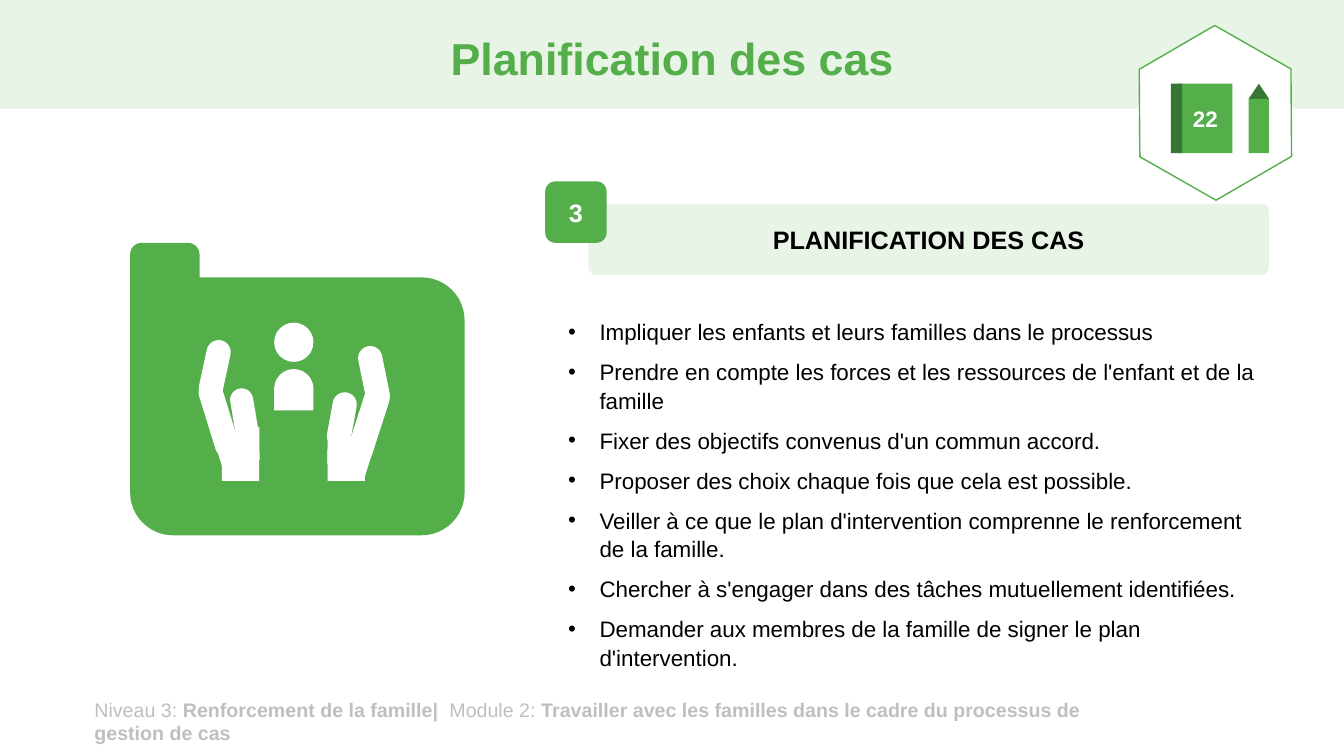
"""Build the case planning slide: title band, folder drawing and bullet list."""
import pptx
import pptx.util
import pptx.dml.color
import pptx.enum.shapes
import pptx.enum.text
import lxml.etree

Cm = pptx.util.Cm
Pt = pptx.util.Pt
KIND = pptx.enum.shapes.MSO_SHAPE
ALIGN = pptx.enum.text.PP_ALIGN
MIDDLE = pptx.enum.text.MSO_ANCHOR.MIDDLE

GREEN, DARK, PALE, WHITE, GREY, BLACK = "54AF4B", "387532", "E8F4E6", "FFFFFF", "BFBFBF", "000000"
FONT = "Arial"

TITLE = "Planification des cas"
HEADING = "PLANIFICATION DES CAS"
STEP = "3"
PAGE_NUMBER = "22"
BULLETS = [
    "Impliquer les enfants et leurs familles dans le processus",
    "Prendre en compte les forces et les ressources de l'enfant et de la famille",
    "Fixer des objectifs convenus d'un commun accord.",
    "Proposer des choix chaque fois que cela est possible.",
    "Veiller à ce que le plan d'intervention comprenne le renforcement de la famille.",
    "Chercher à s'engager dans des tâches mutuellement identifiées.",
    "Demander aux membres de la famille de signer le plan d'intervention.",
]
FOOTER = [
    ("Niveau 3: ", False),
    ("Renforcement de la famille|  ", True),
    ("Module 2: ", False),
    ("Travailler avec les familles dans le cadre du processus de gestion de cas", True),
]

FOLDER = [
    (KIND.ROUNDED_RECTANGLE, (3.28, 6.99, 8.43, 6.5)),
    (KIND.ROUND_2_SAME_RECTANGLE, (3.28, 6.12, 1.75, 2.01)),
]
FINGERS = [
    ((5.21, 9.55, 0.61, 2.01), 342.8),
    ((5.11, 8.56, 0.61, 1.52), 12.2),
    ((5.87, 9.78, 0.58, 1.42), 350.5),
    ((8.97, 9.68, 0.64, 2.01), 17.9),
    ((9.12, 8.71, 0.61, 1.57), 348.5),
    ((8.31, 9.88, 0.61, 1.42), 10.2),
]
PALMS = [
    ((5.69, 10.72, 0.79, 1.19), 72.8, True),
    ((8.33, 10.82, 0.79, 1.24), 287.9, False),
]
WRIST_LEFTS = [5.59, 8.26]
HEAD = (6.91, 8.13, 0.99, 0.99)
TORSO = (6.91, 9.3, 0.99, 1.04)
HEXAGON = (28.42, 0.94, 4.42, 3.81)
BOOK = (29.69, 2.11, 1.37, 1.75)
NOTEBOOK_PARTS = [
    (KIND.RECTANGLE, (29.51, 2.11, 0.28, 1.75), DARK),
    (KIND.ISOSCELES_TRIANGLE, (31.47, 2.11, 0.51, 0.38), DARK),
    (KIND.RECTANGLE, (31.47, 2.49, 0.51, 1.37), GREEN),
]


def colour(value):
    return pptx.dml.color.RGBColor.from_string(value)


def lengths(frame):
    return [Cm(value) for value in frame]


def add_shape(parent, kind, frame, fill, turn=0, adjust=()):
    shape = parent.add_shape(kind, *lengths(frame))
    shape.shadow.inherit = False
    shape.fill.solid()
    shape.fill.fore_color.rgb = colour(fill)
    shape.line.fill.background()
    shape.rotation = turn
    for index, value in enumerate(adjust):
        shape.adjustments[index] = value
    return shape


def style(para, size, ink, bold=None, align=ALIGN.LEFT):
    para.font.name = FONT
    para.font.size = Pt(size)
    para.font.bold = bold
    para.font.color.rgb = colour(ink)
    para.alignment = align


def label(shape, text, size, ink):
    box = shape.text_frame
    box.text = text
    box.vertical_anchor = MIDDLE
    style(box.paragraphs[0], size, ink, True, ALIGN.CENTER)
    return box


def add_text_box(page, frame):
    box = page.shapes.add_textbox(*lengths(frame)).text_frame
    box.word_wrap = True
    return box


def add_bullet(para):
    properties = para._p.get_or_add_pPr()
    properties.set("marL", str(Cm(0.79)))
    properties.set("indent", str(-Cm(0.79)))
    namespace = "{http://schemas.openxmlformats.org/drawingml/2006/main}"
    bullet_font = lxml.etree.Element(namespace + "buFont", typeface=FONT)
    bullet = lxml.etree.Element(namespace + "buChar", char="•")
    defaults = properties.find(namespace + "defRPr")
    defaults.addprevious(bullet_font)
    defaults.addprevious(bullet)


def add_header(page):
    band = add_shape(page.shapes, KIND.RECTANGLE, (0, 0, 33.87, 2.74), PALE)
    title = page.shapes.title
    title.element.addprevious(band.element)
    title.left, title.top, title.width, title.height = lengths((2.34, 0.33, 29.21, 2.41))
    label(title, TITLE, 32, GREEN).paragraphs[0].line_spacing = 0.9


def add_footer(page):
    para = add_text_box(page, (2.13, 17.45, 26.97, 1.45)).paragraphs[0]
    style(para, 14, GREY)
    for text, bold in FOOTER:
        span = para.add_run()
        span.text = text
        span.font.bold = bold


def add_content(page):
    box = add_text_box(page, (14.07, 7.85, 17.91, 9.4))
    box.text = "\n".join(BULLETS)
    for para in box.paragraphs:
        style(para, 16, BLACK)
        para.line_spacing = 1.07
        para.space_after = Pt(8)
        add_bullet(para)
    heading = add_shape(page.shapes, KIND.ROUNDED_RECTANGLE, (14.83, 5.13, 17.15, 1.8), PALE, adjust=[0.108])
    label(heading, HEADING, 18, BLACK)
    badge = add_shape(page.shapes, KIND.ROUNDED_RECTANGLE, (13.74, 4.57, 1.55, 1.55), GREEN)
    label(badge, STEP, 18, WHITE)


def add_folder(page):
    group = page.shapes.add_group_shape().shapes
    for kind, frame in FOLDER:
        add_shape(group, kind, frame, GREEN)
    for frame, turn in FINGERS:
        add_shape(group, KIND.ROUNDED_RECTANGLE, frame, WHITE, turn, [0.5])
    for frame, turn, flipped in PALMS:
        palm = add_shape(group, KIND.FLOWCHART_MANUAL_INPUT, frame, WHITE, turn)
        if flipped:
            palm.element.spPr.xfrm.set("flipH", "1")
    for left in WRIST_LEFTS:
        add_shape(group, KIND.RECTANGLE, (left, 11.33, 0.94, 0.79), WHITE)
    add_shape(group, KIND.ROUND_2_SAME_RECTANGLE, TORSO, WHITE, adjust=[0.5, 0])
    add_shape(group, KIND.OVAL, HEAD, WHITE)


def add_page_badge(page):
    group = page.shapes.add_group_shape().shapes
    hexagon = add_shape(group, KIND.HEXAGON, HEXAGON, WHITE, 29.7, [0.29])
    hexagon.line.color.rgb = colour(GREEN)
    hexagon.line.width = Pt(1)
    book = add_shape(group, KIND.RECTANGLE, BOOK, GREEN)
    label(book, PAGE_NUMBER, 16, WHITE).word_wrap = False
    for kind, frame, fill in NOTEBOOK_PARTS:
        add_shape(group, kind, frame, fill)


def main():
    deck = pptx.Presentation()
    deck.slide_width, deck.slide_height = lengths((33.87, 19.05))
    page = deck.slides.add_slide(deck.slide_layouts[5])
    add_header(page)
    add_footer(page)
    add_content(page)
    add_folder(page)
    add_page_badge(page)
    deck.save("out.pptx")


if __name__ == "__main__":
    main()
